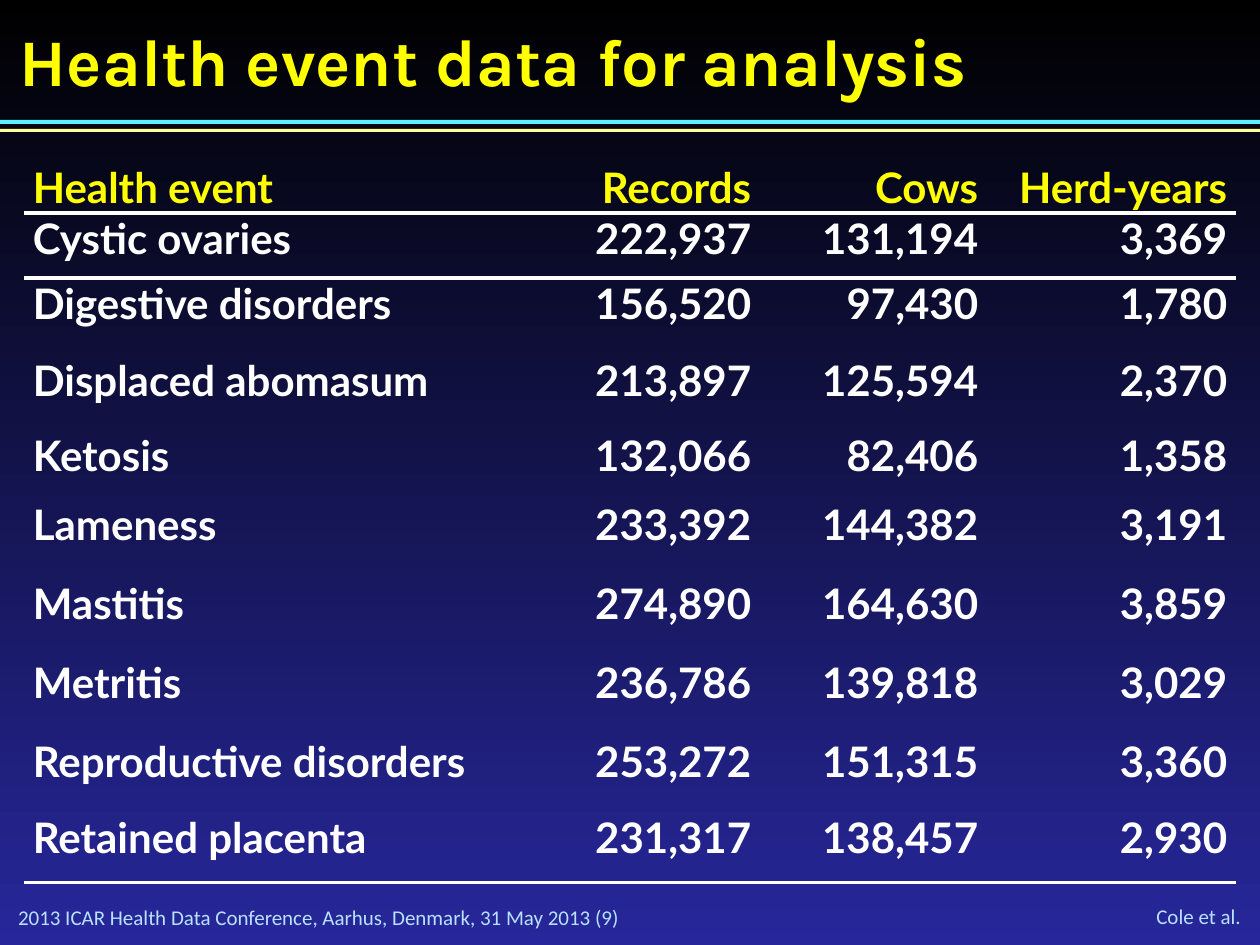
from lxml import etree
from pptx import Presentation
from pptx import util as u
from pptx.dml.color import RGBColor
from pptx.enum import shapes, text
from pptx.oxml.ns import qn

PX = u.Inches(1) // 126
BLACK = RGBColor(0x00, 0x00, 0x00)
NAVY = RGBColor(0x27, 0x27, 0x9B)
CYAN = RGBColor(0x5B, 0xEF, 0xFF)
CREAM = RGBColor(0xFF, 0xFF, 0x99)
YELLOW = RGBColor(0xFF, 0xFF, 0x00)
WHITE = RGBColor(0xFF, 0xFF, 0xFF)
PALE_BLUE = RGBColor(0xB8, 0xE2, 0xFF)
LEFT, RIGHT = text.PP_ALIGN.LEFT, text.PP_ALIGN.RIGHT
NO_STYLE = "{2D5ABB26-0587-4C30-8999-92F81FD0307C}"

COL_WIDTHS = [515, 221, 227, 249]
ROW_HEIGHTS = [63, 65, 77, 75, 69, 79, 79, 79, 76, 71]
ROWS = [
    ("Health event", "Records", "Cows", "Herd-years"),
    ("Cystic ovaries", "222,937", "131,194", "3,369"),
    ("Digestive disorders", "156,520", "97,430", "1,780"),
    ("Displaced abomasum", "213,897", "125,594", "2,370"),
    ("Ketosis", "132,066", "82,406", "1,358"),
    ("Lameness", "233,392", "144,382", "3,191"),
    ("Mastitis", "274,890", "164,630", "3,859"),
    ("Metritis", "236,786", "139,818", "3,029"),
    ("Reproductive disorders", "253,272", "151,315", "3,360"),
    ("Retained placenta", "231,317", "138,457", "2,930"),
]


def px(*values):
    return [v * PX for v in values]


def set_text(tf, words, font, size, color, bold=False, align=LEFT):
    tf.text = words
    p = tf.paragraphs[0]
    p.alignment = align
    f = p.runs[0].font
    f.name, f.size, f.bold = font, u.Pt(size), bold
    f.color.rgb = color
    return p


def plain_frame(sp, anchor):
    tf = sp.text_frame
    tf.margin_left = tf.margin_right = tf.margin_top = tf.margin_bottom = 0
    tf.word_wrap = True
    tf.auto_size = text.MSO_AUTO_SIZE.NONE
    tf.vertical_anchor = anchor
    return tf


def add_background(s):
    fill = s.background.fill
    fill.gradient()
    fill.gradient_angle = 270
    for stop, color in zip(fill.gradient_stops, (BLACK, NAVY)):
        stop.color.rgb = color


def add_rule(s, top, height, color):
    sp = s.shapes.add_shape(shapes.MSO_SHAPE.RECTANGLE, *px(0, top, 1260, height))
    sp.shadow.inherit = False
    sp.fill.solid()
    sp.fill.fore_color.rgb = color
    sp.line.fill.background()


def add_footer(s, box, words, align):
    sp = s.shapes.add_textbox(*px(*box))
    tf = plain_frame(sp, text.MSO_ANCHOR.MIDDLE)
    set_text(tf, words, "Calibri", 12, PALE_BLUE, align=align)


def set_title(s, words):
    sp = s.shapes.title
    sp.left, sp.top, sp.width, sp.height = px(20, 20, 1222, 81)
    tf = plain_frame(sp, text.MSO_ANCHOR.TOP)
    set_text(tf, words, "Karla", 38, YELLOW, bold=True)


def add_border(cell, side):
    ln = etree.Element(qn("a:" + side), w=str(u.Pt(2.25)))
    fill = etree.SubElement(ln, qn("a:solidFill"))
    etree.SubElement(fill, qn("a:srgbClr"), val=str(WHITE))
    cell._tc.get_or_add_tcPr().insert(0, ln)  # borders precede the fill


def format_cell(cell, words, row, col):
    header = row == 0
    cell.margin_left = cell.margin_right = u.Inches(0.07)
    cell.margin_top = cell.margin_bottom = 0
    cell.vertical_anchor = text.MSO_ANCHOR.BOTTOM if header else text.MSO_ANCHOR.TOP
    cell.fill.background()
    p = set_text(cell.text_frame, words, "Lato", 24, YELLOW if header else WHITE,
                 bold=True, align=RIGHT if col else LEFT)
    if header:
        p.space_after = u.Pt(3)
    if row == 1:
        add_border(cell, "lnT")
    if row in (0, len(ROWS) - 1):
        add_border(cell, "lnB")


def add_event_table(s):
    frame = s.shapes.add_table(len(ROWS), len(COL_WIDTHS),
                               *px(24, 150, sum(COL_WIDTHS), sum(ROW_HEIGHTS)))
    table = frame.table
    table.first_row = table.horz_banding = False
    table._tbl.tblPr.find(qn("a:tableStyleId")).text = NO_STYLE
    for column, width in zip(table.columns, px(*COL_WIDTHS)):
        column.width = width
    for row, height in zip(table.rows, px(*ROW_HEIGHTS)):
        row.height = height
    for i, values in enumerate(ROWS):
        for j, words in enumerate(values):
            format_cell(table.cell(i, j), words, i, j)


def main():
    prs = Presentation()
    prs.slide_width, prs.slide_height = px(1260, 945)
    s = prs.slides.add_slide(prs.slide_layouts[5])
    add_background(s)

    # Title and the double rule below it
    set_title(s, "Health event data for analysis")
    add_rule(s, 120, 4, CYAN)
    add_rule(s, 129, 3, CREAM)

    # Health events
    add_event_table(s)

    # Footer
    add_footer(s, (18, 905, 728, 25),
               "2013 ICAR Health Data Conference, Aarhus, Denmark, 31 May 2013 (9)", LEFT)
    add_footer(s, (1099, 903, 142, 26), "Cole et al.", RIGHT)

    prs.save("out.pptx")


if __name__ == "__main__":
    main()
